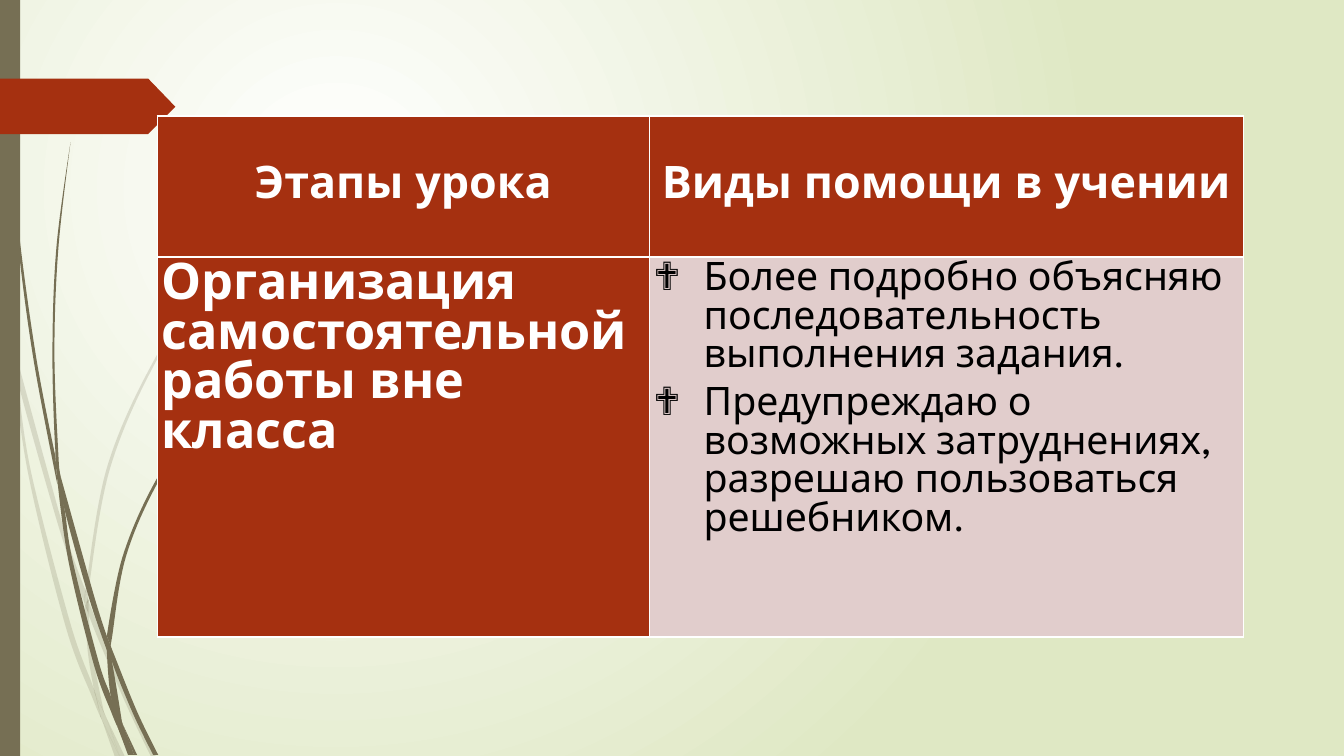
from lxml import etree
from pptx import Presentation
from pptx import util as u
from pptx.dml.color import RGBColor
from pptx.enum import shapes, text
from pptx.oxml.ns import qn

WIDTH, HEIGHT = 13.33, 7.5
FONT = "League Spartan"
WHITE, BLACK, RUST, OLIVE, PINK, LIME = (
    "FFFFFF", "000000", "A53010", "766F54", "E1CDCC", "DFE8C4")

# Each blade piece: one edge from tip to tip, then the other edge back.
PALE_BLADES = [
    ([(0.11, 3.5), (0.09, 3.22), (0, 2.82)], [(0, 2.99), (0.1, 3.44), (0.11, 3.5)]),
    ([(0.14, 3.45), (0.17, 3.76), (0.58, 5.22), (0.84, 5.99)],
     [(0.85, 5.86), (0.62, 5.2), (0.14, 3.45)]),
    ([(0.88, 5.96), (0.88, 6.1), (1.23, 6.94), (1.5, 7.51)],
     [(1.55, 7.51), (1.27, 6.92), (0.92, 6.07), (0.88, 5.96)]),
    ([(1.05, 7.11), (1.19, 7.51)], [(1.24, 7.51), (1.05, 7.11)]),
    ([(0.11, 3.5), (0.28, 4.7), (0.65, 6.21), (0.92, 6.93), (1.01, 7.14)],
     [(0.99, 7.07), (0.93, 6.83), (0.7, 6.19), (0.31, 4.69), (0.17, 3.76), (0.11, 3.5)]),
    ([(0.84, 5.99), (0.87, 6.46), (0.93, 6.83), (0.96, 6.92), (1.05, 7.11)],
     [(1.03, 7.06), (0.91, 6.46), (0.88, 6.1), (0.84, 5.99)]),
    ([(0.88, 5.96), (0.88, 5.84), (1.1, 4.62), (1.6, 3.49), (2.29, 2.45), (2.68, 1.98), (3.12, 1.54)],
     [(3.12, 1.53), (2.68, 1.97), (2.28, 2.44), (1.58, 3.48), (1.07, 4.61), (0.85, 5.84), (0.85, 5.86)]),
    ([(1.01, 7.14), (1.14, 7.51)], [(1.19, 7.51), (1.01, 7.14)]),
    ([(0.88, 6.1), (0.88, 5.96)], [(0.85, 5.86), (0.84, 5.99), (0.88, 6.08)]),
    ([(0.93, 6.83), (0.99, 7.07), (1.01, 7.14), (1.19, 7.51)],
     [(1.19, 7.51), (1.05, 7.11), (0.96, 6.92), (0.93, 6.83)]),
]
DARK_BLADES = [
    ([(0.03, 0), (0.07, 1.1), (0.17, 2.33), (0.33, 3.55), (0.57, 4.81)],
     [(0.55, 4.53), (0.36, 3.55), (0.19, 2.32), (0.08, 1.09), (0.04, 0)]),
    ([(0.6, 4.72), (0.64, 5.05), (0.88, 5.92), (1.06, 6.45)],
     [(1.06, 6.31), (0.93, 5.9), (0.6, 4.72)]),
    ([(1.1, 6.41), (1.11, 6.56), (1.32, 7.08), (1.52, 7.49)],
     [(1.57, 7.49), (1.36, 7.06), (1.13, 6.49), (1.1, 6.41)]),
    ([(0.57, 4.77), (0.68, 5.57), (0.93, 6.59), (1.11, 7.08), (1.17, 7.22)],
     [(1.16, 7.17), (1.1, 6.91), (0.98, 6.57), (0.72, 5.56), (0.64, 5.05), (0.57, 4.77)]),
    ([(0.6, 4.72), (0.58, 4.53), (0.54, 3.49), (0.58, 2.45), (0.7, 1.41)],
     [(0.7, 1.41), (0.56, 2.45), (0.52, 3.49), (0.55, 4.49), (0.6, 4.72)]),
    ([(1.22, 7.19), (1.33, 7.49)], [(1.36, 7.49), (1.22, 7.19)]),
    ([(0.55, 4.49), (0.57, 4.77), (0.64, 5.05)], [(0.6, 4.72), (0.55, 4.49)]),
    ([(1.1, 6.41), (1.11, 6.33), (1.25, 5.52), (1.58, 4.76), (2.05, 4.06), (2.61, 3.44)],
     [(2.6, 3.44), (2.04, 4.05), (1.56, 4.74), (1.22, 5.51), (1.06, 6.31)]),
    ([(1.17, 7.22), (1.27, 7.49)], [(1.31, 7.49), (1.17, 7.22)]),
    ([(1.06, 6.45), (1.1, 6.91), (1.22, 7.19)],
     [(1.21, 7.16), (1.11, 6.56), (1.06, 6.45)]),
    ([(1.06, 6.31), (1.06, 6.45), (1.11, 6.56)], [(1.1, 6.41), (1.06, 6.31)]),
    ([(1.1, 6.91), (1.17, 7.22), (1.3, 7.49)],
     [(1.33, 7.49), (1.22, 7.19), (1.1, 6.91)]),
]
TAG = [(0, 0.78), (1.47, 0.78), (1.74, 1.06), (1.47, 1.33), (0, 1.33)]


def rgb(color):
    return RGBColor.from_string(color)


def paint(sp, color, alpha=None):
    sp.shadow.inherit = False
    sp.fill.solid()
    sp.fill.fore_color.rgb = rgb(color)
    sp.line.fill.background()
    if alpha:
        node = next(sp.element.iter(qn("a:srgbClr")))
        etree.SubElement(node, qn("a:alpha"), val=str(alpha * 1000))


def add_outline(s, points, color, alpha=None):
    start, *rest = [(u.Inches(x), u.Inches(y)) for x, y in points]
    builder = s.shapes.build_freeform(*start)
    builder.add_line_segments(rest, close=True)
    sp = builder.convert_to_shape()
    paint(sp, color, alpha)
    return sp


def bend(sp, tip):
    """Turn the straight segments into Bezier curves, with a corner at point number tip."""
    nodes = list(sp.element.iter(qn("a:pt")))
    points = [(int(n.get("x")), int(n.get("y"))) for n in nodes]
    last = len(points) - 1
    corners = {0, tip, tip + 1, last}

    def handle(i, sign):
        if i in corners:
            return points[i]
        return tuple(round(p + sign * (after - before) / 6) for before, p, after
                     in zip(points[i - 1], points[i], points[i + 1]))

    for i, node in enumerate(nodes[1:], 1):
        segment = node.getparent()
        curve = etree.Element(qn("a:cubicBezTo"))
        for x, y in (handle(i - 1, 1), handle(i, -1), points[i]):
            etree.SubElement(curve, qn("a:pt"), x=str(x), y=str(y))
        segment.getparent().replace(segment, curve)


def add_blades(s, blades, alpha=None):
    for edge, back in blades:
        bend(add_outline(s, edge + back, OLIVE, alpha), len(edge) - 1)


def set_background(s):
    fill = s.background.fill
    fill.gradient()
    for stop, color in zip(fill.gradient_stops, (WHITE, LIME)):
        stop.color.rgb = rgb(color)
    grad = next(s.element.iter(qn("a:gradFill")))
    grad.remove(grad.find(qn("a:lin")))
    radial = etree.Element(qn("a:path"), path="circle")
    etree.SubElement(radial, qn("a:fillToRect"),
                     l="50000", t="50000", r="100000", b="100000")
    grad.find(qn("a:gsLst")).addnext(radial)


def add_bullet(p):
    pPr = p._p.get_or_add_pPr()
    pPr.set("marL", str(u.Inches(0.5)))
    pPr.set("indent", str(-u.Inches(0.5)))
    p.space_after = u.Pt(6.8)
    etree.SubElement(pPr, qn("a:buFont"), typeface="Wingdings", charset="2")
    etree.SubElement(pPr, qn("a:buChar"), char="❖")


def fill_cell(cell, lines, size, fill=RUST, color=WHITE, header=False, bullets=False):
    cell.fill.solid()
    cell.fill.fore_color.rgb = rgb(fill)
    cell.margin_left = cell.margin_right = u.Inches(0.04)
    cell.margin_top = cell.margin_bottom = u.Inches(0.04)
    cell.vertical_anchor = text.MSO_ANCHOR.MIDDLE if header else text.MSO_ANCHOR.TOP
    tf = cell.text_frame
    for i, line in enumerate(lines):
        p = tf.add_paragraph() if i else tf.paragraphs[0]
        p.alignment = text.PP_ALIGN.CENTER if header else text.PP_ALIGN.LEFT
        p.line_spacing = 1.07
        if bullets:
            add_bullet(p)
        r = p.add_run()
        r.text = line
        r.font.name, r.font.size = FONT, u.Pt(size)
        r.font.bold = not bullets
        r.font.color.rgb = rgb(color)


def add_help_table(s):
    """The default table style draws the white rules, thick under the header."""
    columns, rows = (4.88, 5.89), (1.4, 3.77)
    frame = s.shapes.add_table(2, 2, u.Inches(1.56), u.Inches(1.15),
                               u.Inches(sum(columns)), u.Inches(sum(rows)))
    table = frame.table
    table.first_col = True
    for column, width in zip(table.columns, columns):
        column.width = u.Inches(width)
    for row, height in zip(table.rows, rows):
        row.height = u.Inches(height)
    for i, title in enumerate(("Этапы урока", "Виды помощи в учении")):
        fill_cell(table.cell(0, i), [title], 32, header=True)
    fill_cell(table.cell(1, 0), ["Организация самостоятельной работы вне класса"], 36)
    fill_cell(table.cell(1, 1), [
        "Более подробно объясняю последовательность выполнения задания.",
        "Предупреждаю о возможных затруднениях, разрешаю пользоваться решебником.",
    ], 28, PINK, BLACK, bullets=True)


def main():
    prs = Presentation()
    prs.slide_width, prs.slide_height = u.Inches(WIDTH), u.Inches(HEIGHT)
    s = prs.slides.add_slide(prs.slide_layouts[6])
    set_background(s)
    add_blades(s, PALE_BLADES, alpha=20)
    add_blades(s, DARK_BLADES)
    bar = s.shapes.add_shape(shapes.MSO_SHAPE.RECTANGLE, 0, 0,
                             u.Inches(0.2), prs.slide_height)
    paint(bar, OLIVE)
    add_outline(s, TAG, RUST)
    add_help_table(s)
    prs.save("out.pptx")


if __name__ == "__main__":
    main()
